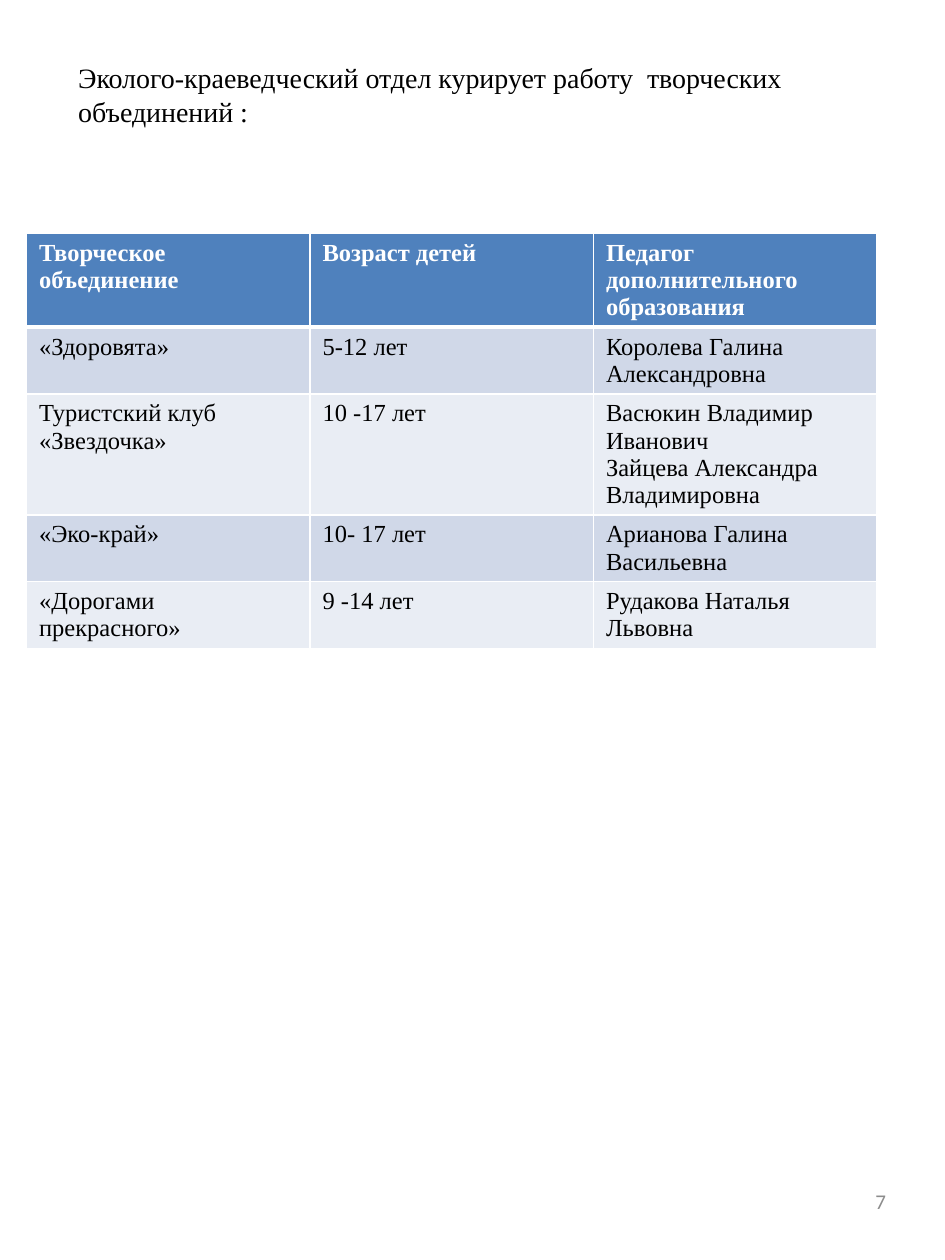
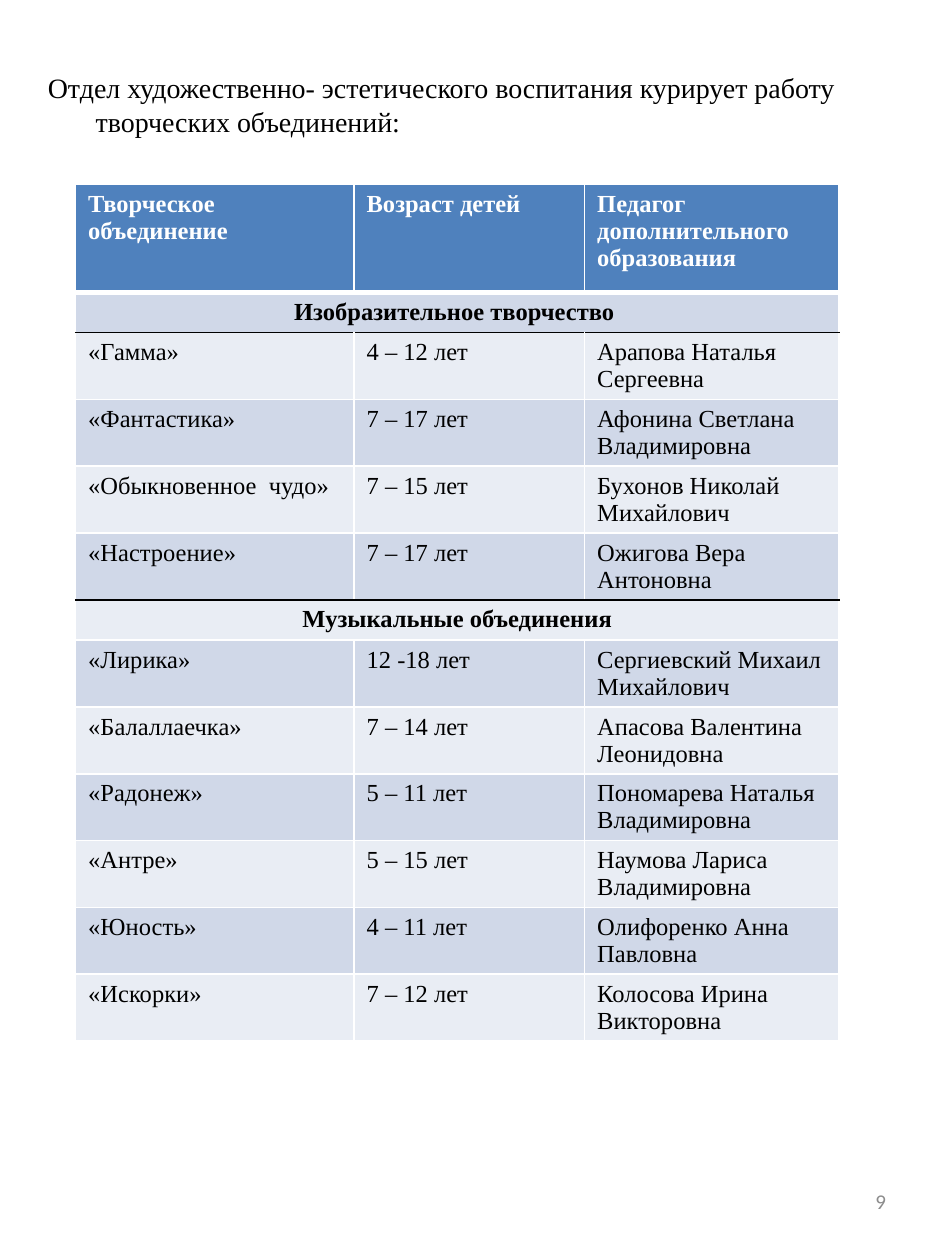
from lxml.etree import SubElement
from pptx import Presentation
from pptx.dml.color import RGBColor
from pptx.enum.text import MSO_ANCHOR, MSO_AUTO_SIZE, PP_ALIGN
from pptx.oxml.ns import qn
from pptx.util import Inches, Pt

BLACK = RGBColor(0x00, 0x00, 0x00)
WHITE = RGBColor(0xFF, 0xFF, 0xFF)
HEADER_BLUE = RGBColor(0x4F, 0x81, 0xBD)
BANDS = [RGBColor(0xE9, 0xED, 0xF4), RGBColor(0xD0, 0xD8, 0xE8)]
PAGE_GREY = RGBColor(0x8C, 0x8C, 0x8C)
SERIF = "Times New Roman"

HEADER = ("Творческое объединение", "Возраст детей", "Педагог дополнительного образования")
ENTRY_HEIGHT = 0.53
SECTION_HEIGHT = 0.32

# A row with a single text is a section heading across the table.
# Rules give the line under a row where it is not thin white.
DEPARTMENTS = [
    {
        "title": "Эколого-краеведческий отдел курирует работу  творческих объединений :",
        "title_box": (0.52, 0.43, 6.11, 0.64),
        "hanging": 0,
        "page": "7",
        "table_at": (0.21, 1.85),
        "columns": (2.25, 2.25, 2.25),
        "header_height": 0.74,
        "tall_rows": {2: 0.96},
        "rules": {0: (WHITE, 3)},
        "rows": [
            ("«Здоровята»", "5-12 лет", "Королева Галина Александровна"),
            ("Туристский клуб «Звездочка»", "10 -17 лет",
             "Васюкин Владимир Иванович\nЗайцева Александра Владимировна"),
            ("«Эко-край»", "10- 17 лет", "Арианова Галина Васильевна"),
            ("«Дорогами прекрасного»", "9 -14 лет", "Рудакова Наталья Львовна"),
        ],
    },
    {
        "title": "Отдел художественно- эстетического воспитания курирует работу  "
                 "творческих объединений:",
        "title_box": (0.28, 0.51, 6.75, 6.6),
        "hanging": 0.38,
        "page": "9",
        "table_at": (0.6, 1.46),
        "columns": (2.21, 1.83, 2.02),
        "header_height": 0.86,
        "tall_rows": {},
        "rules": {0: (WHITE, 3), 1: (BLACK, 1), 5: (BLACK, 1)},
        "rows": [
            ("Изобразительное творчество ",),
            ("«Гамма»", "4 – 12 лет", "Арапова Наталья Сергеевна"),
            ("«Фантастика»", "7 – 17 лет", "Афонина Светлана Владимировна"),
            ("«Обыкновенное  чудо»", "7 – 15 лет", "Бухонов Николай Михайлович"),
            ("«Настроение»", "7 – 17 лет", "Ожигова Вера Антоновна"),
            ("Музыкальные объединения",),
            ("«Лирика»", "12 -18 лет", "Сергиевский Михаил Михайлович"),
            ("«Балаллаечка»", "7 – 14 лет", "Апасова Валентина Леонидовна"),
            ("«Радонеж»", "5 – 11 лет", "Пономарева Наталья Владимировна"),
            ("«Антре»", "5 – 15 лет", "Наумова Лариса Владимировна"),
            ("«Юность»", "4 – 11 лет", "Олифоренко Анна Павловна"),
            ("«Искорки»", "7 – 12 лет", "Колосова Ирина Викторовна"),
        ],
    },
]


def style_text(frame, font_name, size, color, bold=False, align=PP_ALIGN.LEFT):
    for paragraph in frame.paragraphs:
        paragraph.alignment = align
        for run in paragraph.runs:
            run.font.name = font_name
            run.font.size = Pt(size)
            run.font.bold = bold
            run.font.color.rgb = color


def add_borders(cell, above, below):
    """Draw thin white sides and the given (colour, points) lines above and below."""
    side = (WHITE, 1)
    edges = {"a:lnL": side, "a:lnR": side, "a:lnT": above, "a:lnB": below}
    properties = cell._tc.get_or_add_tcPr()
    for tag, (color, width) in edges.items():
        line = SubElement(properties, qn(tag), w=str(Pt(width)))
        fill = SubElement(line, qn("a:solidFill"))
        SubElement(fill, qn("a:srgbClr"), val=str(color))


prs = Presentation()
prs.slide_width = Inches(7.5)
prs.slide_height = Inches(10)

for department in DEPARTMENTS:
    slide = prs.slides.add_slide(prs.slide_layouts[5])

    title = slide.shapes.title
    title.left, title.top, title.width, title.height = map(Inches, department["title_box"])
    heading = title.text_frame
    heading.text = department["title"]
    heading.word_wrap = True
    heading.auto_size = MSO_AUTO_SIZE.NONE
    heading.vertical_anchor = MSO_ANCHOR.TOP
    style_text(heading, SERIF, 16, BLACK)
    indent = Inches(department["hanging"])
    paragraph_properties = heading.paragraphs[0]._p.get_or_add_pPr()
    paragraph_properties.set("marL", str(indent))
    paragraph_properties.set("indent", str(-indent))

    rows = [HEADER] + department["rows"]
    heights = [SECTION_HEIGHT if len(texts) == 1 else department["tall_rows"].get(i, ENTRY_HEIGHT)
               for i, texts in enumerate(rows)]
    heights[0] = department["header_height"]
    left, top = department["table_at"]
    columns = department["columns"]
    groups = slide.shapes.add_table(len(rows), len(columns), Inches(left), Inches(top),
                                    Inches(sum(columns)), Inches(sum(heights))).table
    for column, width in zip(groups.columns, columns):
        column.width = Inches(width)

    rules = department["rules"]
    for i, texts in enumerate(rows):
        groups.rows[i].height = Inches(heights[i])
        is_header = i == 0
        is_section = len(texts) == 1
        for j in range(len(columns)):
            cell = groups.cell(i, j)
            add_borders(cell, rules.get(i - 1, (WHITE, 1)), rules.get(i, (WHITE, 1)))
            cell.fill.solid()
            cell.fill.fore_color.rgb = HEADER_BLUE if is_header else BANDS[i % 2]
        if is_section:
            groups.cell(i, 0).merge(groups.cell(i, len(columns) - 1))
        for j, text in enumerate(texts):
            frame = groups.cell(i, j).text_frame
            frame.text = text
            style_text(frame, SERIF, 14, WHITE if is_header else BLACK,
                       bold=is_header or is_section,
                       align=PP_ALIGN.CENTER if is_section else PP_ALIGN.LEFT)

    page = slide.shapes.add_textbox(Inches(5.38), Inches(9.27), Inches(1.75), Inches(0.53)).text_frame
    page.text = department["page"]
    page.word_wrap = True
    page.vertical_anchor = MSO_ANCHOR.MIDDLE
    style_text(page, "Calibri", 12, PAGE_GREY, align=PP_ALIGN.RIGHT)

prs.save("out.pptx")
